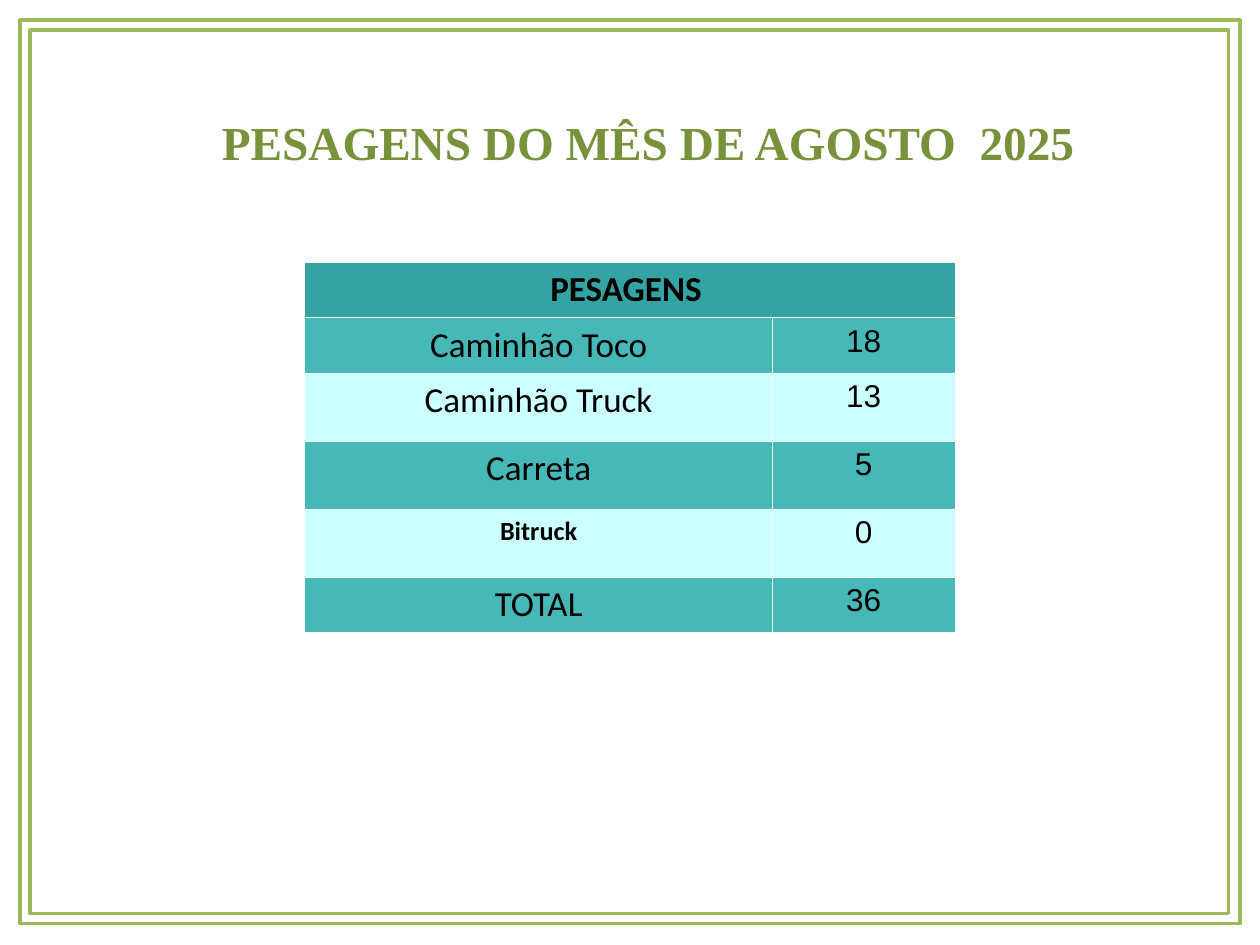
import pptx
import pptx.dml.color
import pptx.enum.text
import pptx.oxml
import pptx.oxml.ns
import pptx.util
from pptx.util import Inches

GREEN = "9BBA58"
TITLE_GREEN = "77923B"
HEADER_TEAL = "33A3A3"
TEAL = "47B8B8"
PALE_CYAN = "CCFFFF"
WHITE = "FFFFFF"
BLACK = "000000"

VEHICLE_COUNTS = [
    ("Caminhão Toco", "18"),
    ("Caminhão Truck", "13"),
    ("Carreta", "5"),
    ("Bitruck", "0"),
    ("TOTAL", "36"),
]
COLUMN_WIDTHS = [3.71, 1.45]
ROW_HEIGHTS = [0.44, 0.44, 0.54, 0.54, 0.54, 0.44]


def color(value):
    return pptx.dml.color.RGBColor.from_string(value)


class WeighingSlide:
    def __init__(self, presentation):
        self.slide = presentation.slides.add_slide(presentation.slide_layouts[5])
        self.slide.background.fill.solid()
        self.slide.background.fill.fore_color.rgb = color(WHITE)

    def style_paragraph(self, paragraph, font_name, size, font_color, bold):
        font = paragraph.font
        font.name = font_name
        font.size = pptx.util.Pt(size)
        font.bold = bold
        font.color.rgb = color(font_color)

    def add_frame(self, outer, inner):
        builder = None
        for left, top, right, bottom in (outer, inner):
            corners = [(left, bottom), (right, bottom), (right, top), (left, top)]
            points = [(Inches(x), Inches(y)) for x, y in corners]
            if builder is None:
                builder = self.slide.shapes.build_freeform(*points[0])
            else:
                builder.move_to(*points[0])
            builder.add_line_segments(points[1:], close=True)
        shape = builder.convert_to_shape()
        shape.shadow.inherit = False
        shape.fill.background()
        shape.line.color.rgb = color(GREEN)
        shape.line.width = pptx.util.Pt(2)

    def add_title(self, text, left, top, width, height):
        title = self.slide.shapes.title
        title.left, title.top = Inches(left), Inches(top)
        title.width, title.height = Inches(width), Inches(height)
        frame = title.text_frame
        frame.text = text
        frame.word_wrap = True
        frame.auto_size = pptx.enum.text.MSO_AUTO_SIZE.NONE
        frame.vertical_anchor = pptx.enum.text.MSO_ANCHOR.TOP
        frame.margin_left = Inches(0.29)
        frame.margin_top = Inches(0.01)
        frame.margin_right = frame.margin_bottom = 0
        paragraph = frame.paragraphs[0]
        paragraph.alignment = pptx.enum.text.PP_ALIGN.LEFT
        self.style_paragraph(paragraph, "Times New Roman", 27, TITLE_GREEN, True)

    def format_cell(self, cell, fill):
        properties = cell._tc.get_or_add_tcPr()
        for side in ("lnL", "lnR", "lnT", "lnB"):
            properties.append(pptx.oxml.parse_xml(
                f'<a:{side} {pptx.oxml.ns.nsdecls("a")} w="{pptx.util.Pt(0.75)}">'
                f'<a:solidFill><a:srgbClr val="{WHITE}"/></a:solidFill></a:{side}>'
            ))
        cell.fill.solid()
        cell.fill.fore_color.rgb = color(fill)

    def write_cell(self, cell, text, font_name, size, bold=False):
        cell.text = text
        paragraph = cell.text_frame.paragraphs[0]
        paragraph.alignment = pptx.enum.text.PP_ALIGN.CENTER
        self.style_paragraph(paragraph, font_name, size, BLACK, bold)

    def add_table(self, header, records, left, top):
        table = self.slide.shapes.add_table(
            len(ROW_HEIGHTS), len(COLUMN_WIDTHS), Inches(left), Inches(top),
            Inches(sum(COLUMN_WIDTHS)), Inches(sum(ROW_HEIGHTS)),
        ).table
        for column, width in zip(table.columns, COLUMN_WIDTHS):
            column.width = Inches(width)
        for index, (row, height) in enumerate(zip(table.rows, ROW_HEIGHTS)):
            row.height = Inches(height)
            fill = HEADER_TEAL if index == 0 else TEAL if index % 2 else PALE_CYAN
            for cell in row.cells:
                self.format_cell(cell, fill)
        table.cell(0, 0).merge(table.cell(0, 1))
        self.write_cell(table.cell(0, 0), header, "Calibri", 20, True)
        for index, (vehicle, count) in enumerate(records, start=1):
            small = vehicle == "Bitruck"
            self.write_cell(table.cell(index, 0), vehicle, "Calibri", 15 if small else 20, small)
            self.write_cell(table.cell(index, 1), count, "Arial", 18)


def main():
    presentation = pptx.Presentation()
    presentation.slide_width = Inches(10)
    presentation.slide_height = Inches(7.5)
    weighing = WeighingSlide(presentation)
    weighing.add_frame((0.16, 0.16, 9.84, 7.33), (0.24, 0.24, 9.75, 7.25))
    weighing.add_title("PESAGENS DO MÊS DE AGOSTO  2025", 1.47, 0.89, 7.57, 0.45)
    weighing.add_table("PESAGENS ", VEHICLE_COUNTS, 2.42, 2.08)
    presentation.save("out.pptx")


if __name__ == "__main__":
    main()
